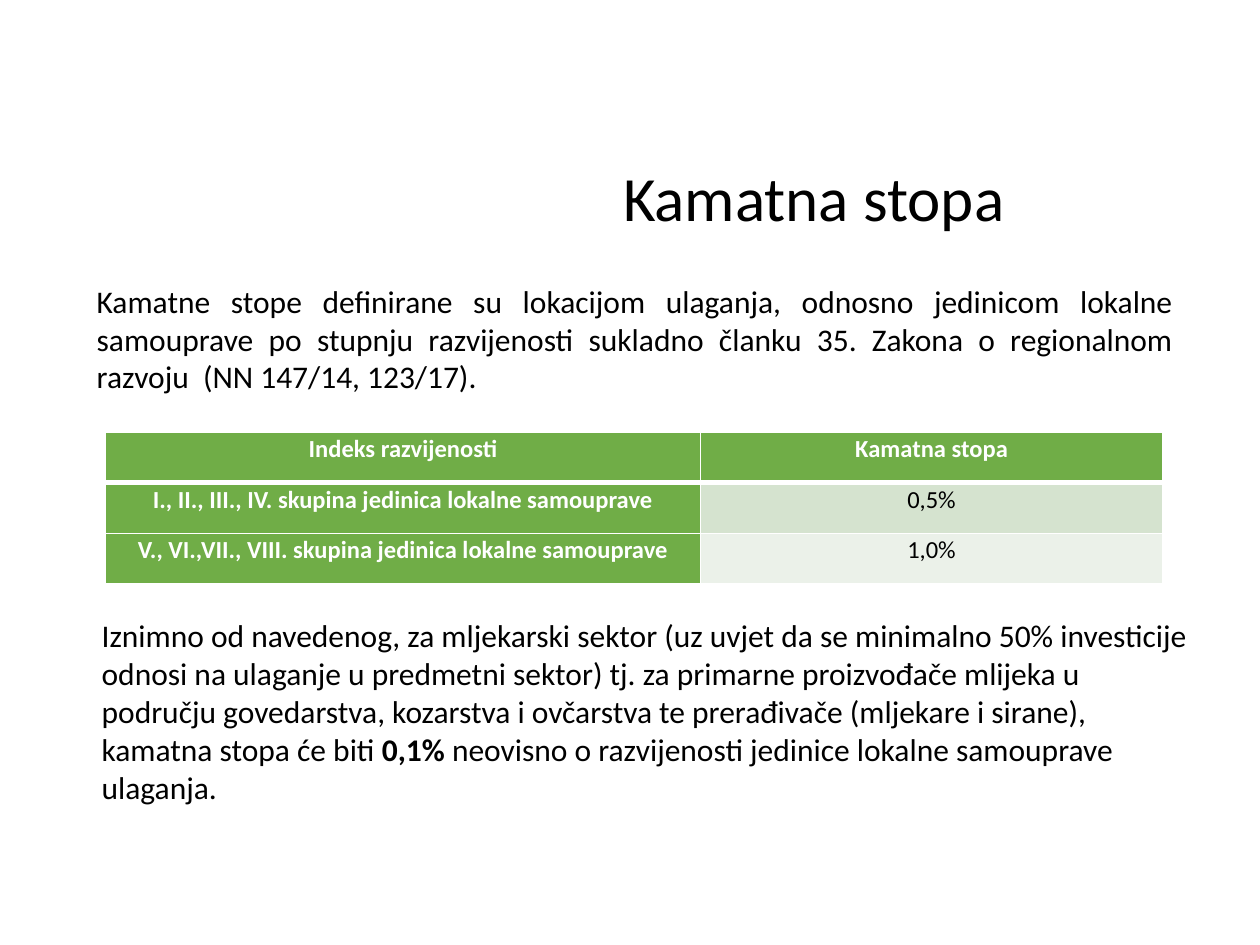
from dataclasses import dataclass

from lxml.etree import SubElement
from pptx import Presentation
from pptx.dml.color import RGBColor as RGB
from pptx.enum.text import MSO_ANCHOR as Anchor, PP_ALIGN as Align
from pptx.oxml.ns import qn
from pptx.util import Cm, Pt


@dataclass(frozen=True)
class Theme:
    font: str = "Calibri"
    text: str = "000000"
    light: str = "FFFFFF"
    green: str = "70AD47"
    bands: tuple = ("D5E3CF", "EBF1E9")
    title_size: int = 36
    body_size: int = 18
    table_size: int = 14


THEME = Theme()
INTRO = [
    ("Kamatne stope definirane su lokacijom ulaganja, odnosno jedinicom lokalne "
     "samouprave po stupnju razvijenosti sukladno članku 35. Zakona o regionalnom "
     "razvoju  (NN 147/14, 123/17).", False),
]
EXCEPTION = [
    ("Iznimno od navedenog, za mljekarski sektor (uz uvjet da se minimalno 50% "
     "investicije odnosi na ulaganje u predmetni sektor) tj. za primarne proizvođače "
     "mlijeka u području govedarstva, kozarstva i ovčarstva te prerađivače (mljekare "
     "i sirane), kamatna stopa će biti ", False),
    ("0,1%", True),
    (" neovisno o razvijenosti jedinice lokalne samouprave ulaganja.", False),
]
RATES = [
    ("Indeks razvijenosti", "Kamatna stopa"),
    ("I., II., III., IV. skupina jedinica lokalne samouprave", "0,5%"),
    ("V., VI.,VII., VIII. skupina jedinica lokalne samouprave", "1,0%"),
]


def style_run(r, size, color=THEME.text, bold=False):
    r.font.name = THEME.font
    r.font.size = Pt(size)
    r.font.bold = bold
    r.font.color.rgb = RGB.from_string(color)


def set_title(slide, text, left, top, width, height):
    sp = slide.shapes.title
    sp.left, sp.top, sp.width, sp.height = left, top, width, height
    tf = sp.text_frame
    tf.text = text
    tf.vertical_anchor = Anchor.MIDDLE
    p = tf.paragraphs[0]
    p.alignment = Align.CENTER
    style_run(p.runs[0], THEME.title_size)


def add_text(slide, parts, box, align=Align.LEFT, anchor=Anchor.TOP):
    tf = slide.shapes.add_textbox(*box).text_frame
    tf.word_wrap = True
    tf.vertical_anchor = anchor
    p = tf.paragraphs[0]
    p.alignment = align
    for text, bold in parts:
        r = p.add_run()
        r.text = text
        style_run(r, THEME.body_size, bold=bold)


def set_borders(cell, **widths):
    tc_pr = cell._tc.get_or_add_tcPr()
    for pos, side in enumerate("LRTB"):
        ln = tc_pr.makeelement(qn(f"a:ln{side}"), w=str(Pt(widths.get(side, 1))))
        fill = SubElement(ln, qn("a:solidFill"))
        SubElement(fill, qn("a:srgbClr"), val=THEME.light)
        tc_pr.insert(pos, ln)


def format_cell(cell, text, fill, color, bold):
    cell.fill.solid()
    cell.fill.fore_color.rgb = RGB.from_string(fill)
    cell.margin_left = cell.margin_right = Cm(0.18)
    cell.margin_top = cell.margin_bottom = 0
    cell.text_frame.text = text
    p = cell.text_frame.paragraphs[0]
    p.alignment = Align.CENTER
    p.line_spacing = 1.07
    style_run(p.runs[0], THEME.table_size, color, bold)


def add_rate_table(slide, rows, left, top, col_widths, row_height):
    table = slide.shapes.add_table(
        len(rows), len(col_widths), left, top,
        sum(col_widths), row_height * len(rows)).table
    for col, width in zip(table.columns, col_widths):
        col.width = width
    for i, row in enumerate(rows):
        table.rows[i].height = row_height
        for j, text in enumerate(row):
            cell = table.cell(i, j)
            heading = i == 0 or j == 0
            fill = THEME.green if heading else THEME.bands[i - 1]
            color = THEME.light if heading else THEME.text
            format_cell(cell, text, fill, color, heading)
            set_borders(cell, T=3 if i == 1 else 1, B=3 if i == 0 else 1)


def main():
    prs = Presentation()
    prs.slide_width, prs.slide_height = Cm(25.4), Cm(19.05)
    slide = prs.slides.add_slide(prs.slide_layouts[5])
    add_text(slide, INTRO, (Cm(1.7), Cm(5.54), Cm(22.2), Cm(2.57)),
             Align.JUSTIFY, Anchor.MIDDLE)
    set_title(slide, "Kamatna stopa", Cm(9.7), Cm(2.92), Cm(13.41), Cm(2.06))
    add_rate_table(slide, RATES, Cm(2.13), Cm(8.71), (Cm(11.99), Cm(9.32)), Cm(1.02))
    add_text(slide, EXCEPTION, (Cm(1.8), Cm(12.3), Cm(22.6), Cm(4.11)))
    prs.save("out.pptx")


if __name__ == "__main__":
    main()
